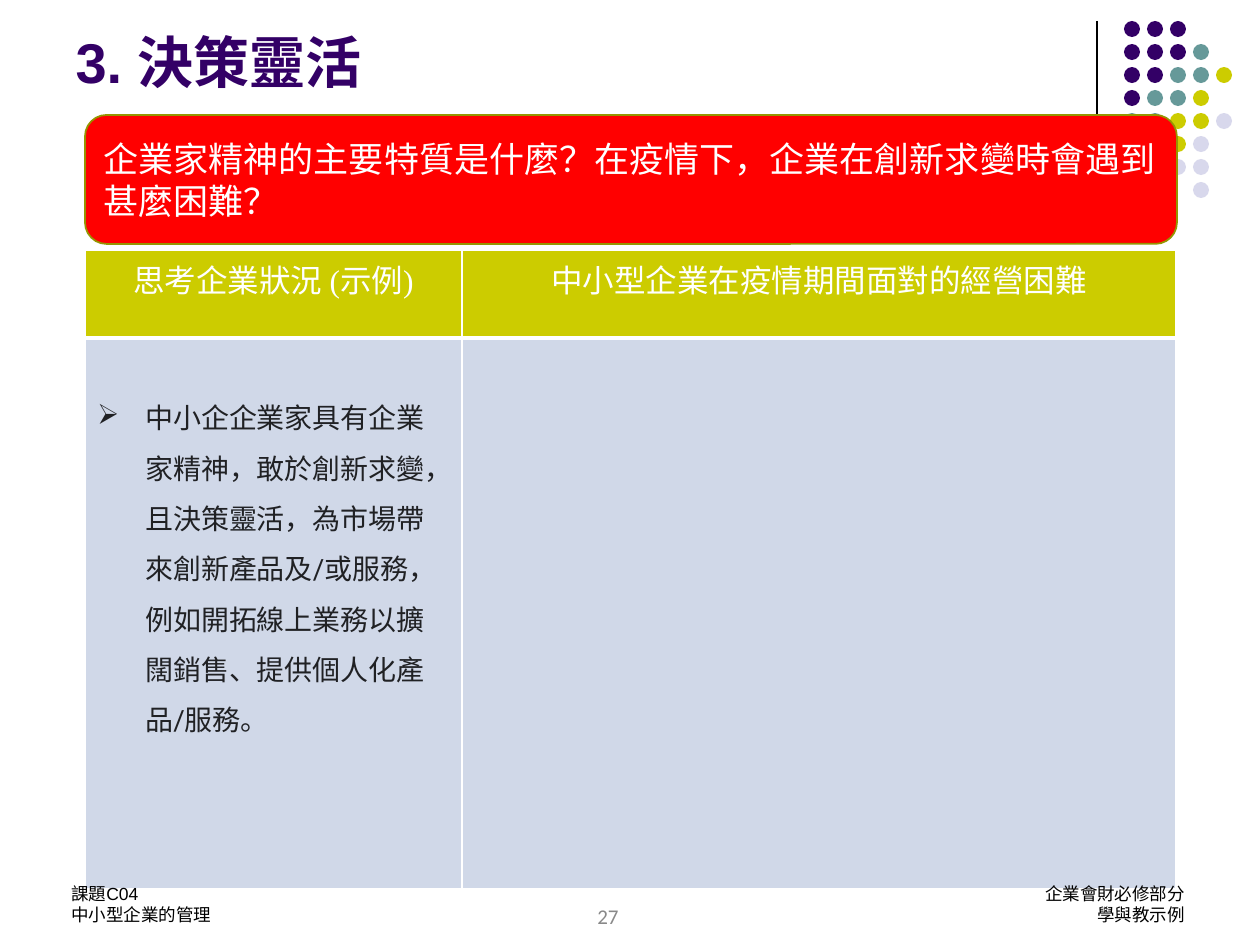
"""Build the slide on flexible decision making in small and medium enterprises."""
from lxml.etree import SubElement
from pptx import Presentation
from pptx.dml.color import RGBColor
from pptx.enum.shapes import MSO_CONNECTOR as CONNECTOR, MSO_SHAPE as SHAPE
from pptx.enum.text import MSO_ANCHOR as ANCHOR, PP_ALIGN as ALIGN
from pptx.oxml.ns import qn
from pptx.util import Pt

PX = 914400 // 126
COLORS = {
    "purple": "330066", "teal": "669999", "olive": "CCCC00", "lavender": "D8D8EC",
    "red": "FF0000", "outline": "959500", "cell": "D0D8E8", "ink": "202124",
    "gray": "898989", "black": "000000", "white": "FFFFFF",
}


def rgb(name):
    return RGBColor.from_string(COLORS[name])


def add_text(paragraph, text, font, size, color, align=ALIGN.LEFT, bold=False):
    paragraph.alignment = align
    run = paragraph.add_run()
    run.text = text
    run.font.name = font
    run.font.size = Pt(size)
    run.font.bold = bold
    run.font.color.rgb = rgb(color)


presentation = Presentation()
presentation.slide_width = 1260 * PX
presentation.slide_height = 945 * PX
slide = presentation.slides.add_slide(presentation.slide_layouts[5])
shapes = slide.shapes

title = shapes.title
title.left, title.top, title.width, title.height = [v * PX for v in (63, -4, 1134, 105)]
title.text_frame.vertical_anchor = ANCHOR.BOTTOM
add_text(title.text_frame.paragraphs[0], "3. 決策靈活", "Arial", 32, "purple", bold=True)

divider = shapes.add_connector(CONNECTOR.STRAIGHT, 1097 * PX, 21 * PX, 1097 * PX, 231 * PX)
divider.line.color.rgb = rgb("black")
divider.line.width = Pt(0.75)
SubElement(divider._element.spPr, qn("a:effectLst"))

DOT_COLORS = {"P": "purple", "T": "teal", "O": "olive", "L": "lavender"}
DOT_ROWS = ["PPP", "PPPT", "PPTTO", "PTTO", "TTOOL", "  OL", "  LL", "   L"]
for row, letters in enumerate(DOT_ROWS):
    for column, letter in enumerate(letters):
        if letter in DOT_COLORS:
            dot = shapes.add_shape(SHAPE.OVAL, (1124 + 23 * column) * PX,
                                   (21 + 23 * row) * PX, 16 * PX, 16 * PX)
            dot.shadow.inherit = False
            dot.fill.solid()
            dot.fill.fore_color.rgb = rgb(DOT_COLORS[letter])
            dot.line.fill.background()

table = shapes.add_table(2, 2, 85 * PX, 250 * PX, 1091 * PX, 639 * PX).table
for column, width in zip(table.columns, (377, 714)):
    column.width = width * PX
for row, height in zip(table.rows, (88, 551)):
    row.height = height * PX
for row, fill, top, bottom in ((0, "olive", 1, 3), (1, "cell", 3, 1)):
    for column in range(2):
        cell = table.cell(row, column)
        properties = cell._tc.get_or_add_tcPr()
        for side, width in (("L", 1), ("R", 1), ("T", top), ("B", bottom)):
            border = SubElement(properties, qn(f"a:ln{side}"), w=str(Pt(width)))
            SubElement(SubElement(border, qn("a:solidFill")), qn("a:srgbClr"),
                       val=COLORS["white"])
        cell.fill.solid()
        cell.fill.fore_color.rgb = rgb(fill)
for column, heading in enumerate(("思考企業狀況 (示例)", "中小型企業在疫情期間面對的經營困難")):
    add_text(table.cell(0, column).text_frame.paragraphs[0], heading,
             "Times New Roman", 18, "white", ALIGN.CENTER)

question = shapes.add_shape(SHAPE.ROUNDED_RECTANGLE, 85 * PX, 115 * PX, 1092 * PX, 129 * PX)
question.shadow.inherit = False
question.fill.solid()
question.fill.fore_color.rgb = rgb("red")
question.line.color.rgb = rgb("outline")
question.line.width = Pt(1)
question.text_frame.vertical_anchor = ANCHOR.MIDDLE
add_text(question.text_frame.paragraphs[0],
         "企業家精神的主要特質是什麼？在疫情下，企業在創新求變時會遇到甚麼困難？",
         "Calibri", 20, "white")

situation = shapes.add_textbox(85 * PX, 378 * PX, 367 * PX, 369 * PX)
situation.text_frame.word_wrap = True
paragraph = situation.text_frame.paragraphs[0]
add_text(paragraph,
         "中小企企業家具有企業家精神，敢於創新求變，且決策靈活，為市場帶來創新產品及/或服務，"
         "例如開拓線上業務以擴闊銷售、提供個人化產品/服務。",
         "Roboto", 16, "ink")
paragraph.line_spacing = 1.5
bullet = paragraph._p.get_or_add_pPr()
bullet.set("marL", str(48 * PX))
bullet.set("indent", str(-48 * PX))
SubElement(SubElement(bullet, qn("a:buClr")), qn("a:srgbClr"), val=COLORS["ink"])
SubElement(bullet, qn("a:buFont"), typeface="Wingdings")
SubElement(bullet, qn("a:buChar"), char="Ø")

FOOTERS = [
    (461, 897, 294, ["27"], "Calibri", 12, "gray", ALIGN.CENTER),
    (730, 877, 467, ["企業會財必修部分", "學與教示例"], "Arial", 10, "black", ALIGN.RIGHT),
    (59, 877, 294, ["課題C04", "中小型企業的管理"], "Arial", 10, "black", ALIGN.LEFT),
]
for left, top, width, lines, font, size, color, align in FOOTERS:
    footer = shapes.add_textbox(left * PX, top * PX, width * PX, 63 * PX)
    frame = footer.text_frame
    frame.word_wrap = True
    for index, line in enumerate(lines):
        paragraph = frame.add_paragraph() if index else frame.paragraphs[0]
        add_text(paragraph, line, font, size, color, align)

presentation.save("out.pptx")
